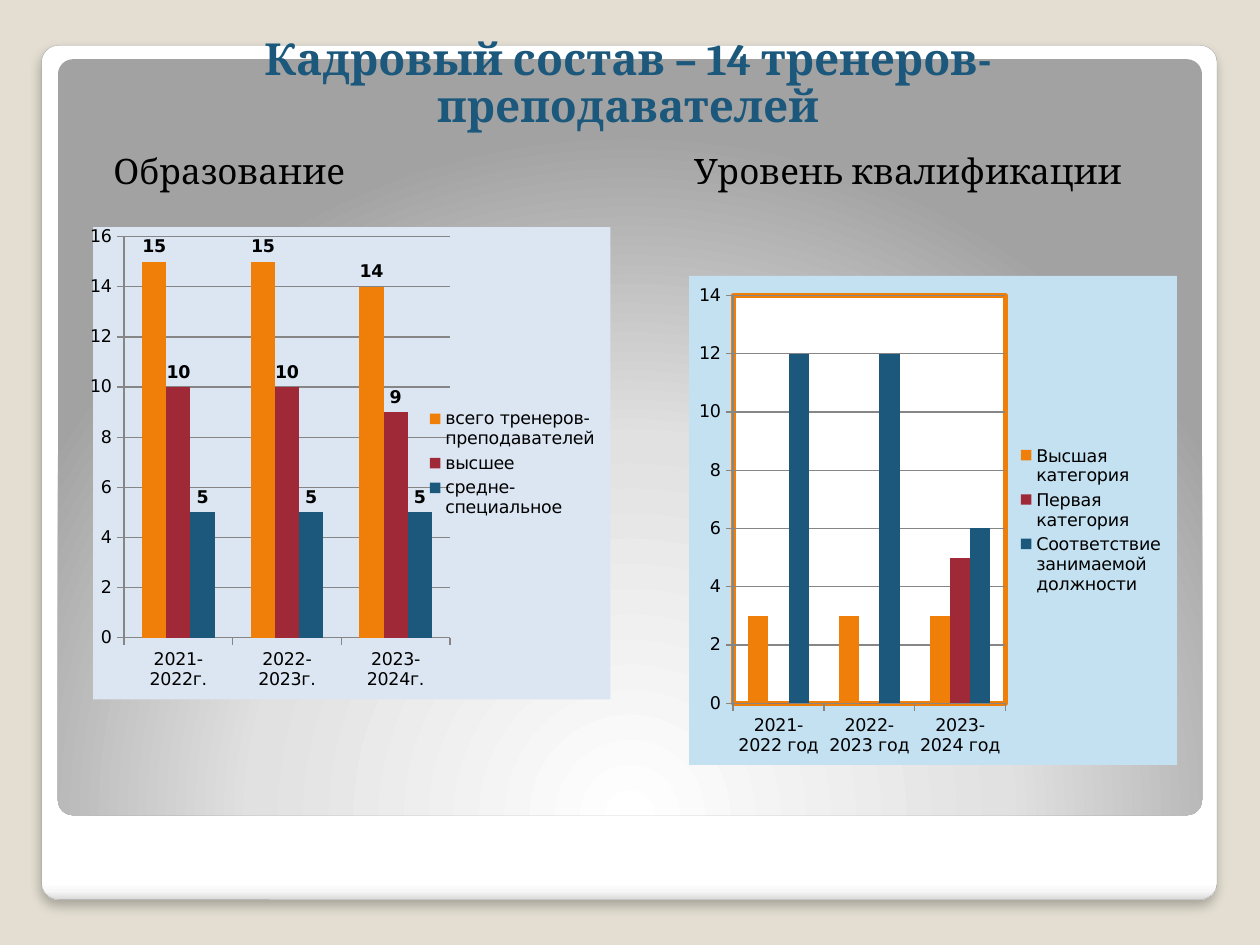
from dataclasses import dataclass
from typing import Optional

from lxml.etree import SubElement
from pptx import Presentation
from pptx.chart.data import CategoryChartData
from pptx.dml.color import RGBColor
from pptx.enum.chart import XL_CHART_TYPE as ChartType
from pptx.enum.chart import XL_LABEL_POSITION as LabelPosition
from pptx.enum.chart import XL_LEGEND_POSITION as LegendPosition
from pptx.enum.chart import XL_TICK_MARK as TickMark
from pptx.enum.shapes import MSO_SHAPE as ShapeType
from pptx.enum.text import MSO_ANCHOR as Anchor
from pptx.enum.text import MSO_AUTO_SIZE as AutoSize
from pptx.enum.text import PP_ALIGN as Align
from pptx.oxml import parse_xml
from pptx.oxml.ns import nsdecls, qn
from pptx.util import Inches, Pt


@dataclass(frozen=True)
class Theme:
    background: str = "E3DED1"
    frame_line: str = "A4A4A4"
    title: str = "1B587C"
    text: str = "000000"
    axis: str = "868686"
    series: tuple = ("F07F09", "9F2936", "1B587C")
    text_font: str = "Cambria"
    chart_font: str = "DejaVu Sans"
    title_size: float = 25.2
    heading_size: float = 20
    chart_size: float = 10


@dataclass(frozen=True)
class Area:
    column: float
    row: float
    columns: float
    rows: float

    def box(self) -> tuple:
        return tuple(
            Inches(cells * CELL)
            for cells in (self.column, self.row, self.columns, self.rows)
        )


@dataclass(frozen=True)
class Panel:
    area: Area
    stops: tuple
    direction: str
    line: Optional[str] = None
    shadow: bool = False


@dataclass(frozen=True)
class Staff:
    heading: str
    heading_area: Area
    area: Area
    fill: str
    categories: tuple
    series: dict
    maximum: int
    labels: bool = False
    plot_layout: tuple = ()
    plot_fill: Optional[str] = None


THEME = Theme()
CELL = 0.1
COLUMNS, ROWS = 100, 75

PANELS = (
    Panel(
        Area(3.3, 3.6, 93.3, 67.8),
        ((0, "FFFFFF"), (98, "FFFFFF"), (99, "F7F7F7"), (100, "DADADA")),
        '<a:lin ang="5400000" scaled="0"/>',
        THEME.frame_line,
        True,
    ),
    Panel(
        Area(4.6, 4.7, 90.8, 60),
        ((0, "FFFFFF"), (55, "E1E1E1"), (100, "A2A2A2")),
        '<a:path path="circle">'
        '<a:fillToRect l="50000" t="175000" r="50000" b="-75000"/></a:path>',
    ),
)

STAFF = (
    Staff(
        "Образование",
        Area(7, 10.9, 41.6, 42.9),
        Area(7.15, 18, 41.3, 37.5),
        "DCE6F2",
        ("2021-2022г.", "2022-2023г.", "2023-2024г."),
        {
            "всего тренеров-преподавателей": (15, 15, 14),
            "высшее": (10, 10, 9),
            "средне-специальное": (5, 5, 5),
        },
        16,
        labels=True,
        plot_layout=(0.06, 0.02, 0.63, 0.85),
    ),
    Staff(
        "Уровень квалификации",
        Area(53.1, 10.9, 41.9, 42.9),
        Area(54.7, 21.9, 38.7, 38.8),
        "C4E1F2",
        ("2021-2022 год", "2022-2023 год", "2023-2024 год"),
        {
            "Высшая категория": (3, 3, 3),
            "Первая категория": (0, 0, 5),
            "Соответствие занимаемой должности": (12, 12, 6),
        },
        14,
        plot_fill="FFFFFF",
    ),
)


def color(value: str) -> RGBColor:
    return RGBColor.from_string(value)


def place(shape, area: Area) -> None:
    shape.left, shape.top, shape.width, shape.height = area.box()


def style_font(font, name: str, size: float, value: str, bold: bool = False) -> None:
    font.name, font.size, font.bold = name, Pt(size), bold
    font.color.rgb = color(value)


def draw_panel(slide, panel: Panel) -> None:
    shape = slide.shapes.add_shape(ShapeType.ROUNDED_RECTANGLE, *panel.area.box())
    shape.adjustments[0] = 0.02
    shape.shadow.inherit = False
    if panel.line:
        shape.line.color.rgb = color(panel.line)
        shape.line.width = Pt(0.16)
    else:
        shape.line.fill.background()
    stops = "".join(
        f'<a:gs pos="{position * 1000}"><a:srgbClr val="{value}"/></a:gs>'
        for position, value in panel.stops
    )
    properties = shape.element.spPr
    properties.find(qn("a:prstGeom")).addnext(parse_xml(
        f'<a:gradFill {nsdecls("a")} rotWithShape="1"><a:gsLst>{stops}</a:gsLst>'
        f"{panel.direction}</a:gradFill>"
    ))
    if panel.shadow:
        properties.find(qn("a:effectLst")).append(parse_xml(
            f'<a:outerShdw {nsdecls("a")} blurRad="{Pt(6)}" dist="{Pt(4)}" '
            'dir="5400000" algn="t" rotWithShape="0"><a:srgbClr val="000000">'
            '<a:alpha val="25000"/></a:srgbClr></a:outerShdw>'
        ))


def write_title(shape, text: str) -> None:
    place(shape, Area(4.7, 4.7, 90.3, 6.3))
    frame = shape.text_frame
    frame.text = text
    frame.word_wrap, frame.auto_size = True, AutoSize.NONE
    frame.vertical_anchor = Anchor.BOTTOM
    frame.margin_left = frame.margin_right = Inches(0.5)
    paragraph = frame.paragraphs[0]
    paragraph.alignment = Align.CENTER
    paragraph.line_spacing = 0.9
    style_font(paragraph.font, THEME.text_font, THEME.title_size, THEME.title, True)


def write_heading(shape, staff: Staff) -> None:
    place(shape, staff.heading_area)
    frame = shape.text_frame
    frame.text = staff.heading
    frame.auto_size = AutoSize.NONE
    frame.margin_left, frame.margin_top = Inches(0.2), Inches(0.1)
    paragraph = frame.paragraphs[0]
    paragraph.space_before = Pt(0)
    properties = paragraph._p.get_or_add_pPr()
    properties.set("marL", str(Inches(0.29)))
    properties.set("indent", str(-Inches(0.29)))
    SubElement(properties, qn("a:buNone"))
    style_font(paragraph.font, THEME.text_font, THEME.heading_size, THEME.text)


def area_fill(fill: str, line: str):
    return parse_xml(
        f'<c:spPr {nsdecls("c", "a")}><a:solidFill><a:srgbClr val="{fill}"/>'
        f"</a:solidFill>{line}</c:spPr>"
    )


def format_plot_area(plot_area, staff: Staff) -> None:
    if staff.plot_layout:
        for layout in plot_area.findall(qn("c:layout")):
            plot_area.remove(layout)
        sides = "".join(
            f'<c:{name} val="{share}"/>'
            for name, share in zip("xywh", staff.plot_layout)
        )
        plot_area.insert(0, parse_xml(
            f'<c:layout {nsdecls("c")}><c:manualLayout><c:layoutTarget val="inner"/>'
            f'<c:xMode val="edge"/><c:yMode val="edge"/>{sides}'
            "</c:manualLayout></c:layout>"
        ))
    if staff.plot_fill:
        plot_area.append(area_fill(
            staff.plot_fill,
            f'<a:ln w="{Pt(3)}"><a:solidFill><a:srgbClr val="{THEME.series[0]}"/>'
            "</a:solidFill><a:round/></a:ln>",
        ))


def draw_chart(slide, staff: Staff) -> None:
    data = CategoryChartData()
    data.categories = staff.categories
    for name, values in staff.series.items():
        data.add_series(name, values)
    chart = slide.shapes.add_chart(
        ChartType.COLUMN_CLUSTERED, *staff.area.box(), data
    ).chart
    chart.has_title = False
    style_font(chart.font, THEME.chart_font, THEME.chart_size, THEME.text)
    chart.has_legend = True
    chart.legend.position = LegendPosition.RIGHT
    chart.legend.include_in_layout = False
    for axis in (chart.category_axis, chart.value_axis):
        axis.major_tick_mark = TickMark.OUTSIDE
        axis.format.line.color.rgb = color(THEME.axis)
    scale = chart.value_axis
    scale.minimum_scale, scale.maximum_scale, scale.major_unit = 0, staff.maximum, 2
    scale.major_gridlines.format.line.color.rgb = color(THEME.axis)
    plot = chart.plots[0]
    plot.gap_width, plot.overlap, plot.vary_by_categories = 150, 0, False
    for series, value in zip(plot.series, THEME.series):
        series.format.fill.solid()
        series.format.fill.fore_color.rgb = color(value)
        if staff.labels:
            labels = series.data_labels
            labels.show_value = True
            labels.position = LabelPosition.OUTSIDE_END
            style_font(
                labels.font, THEME.chart_font, THEME.chart_size, THEME.text, True
            )
    body = chart.element.find(qn("c:chart"))
    body.addnext(area_fill(staff.fill, "<a:ln><a:noFill/></a:ln>"))
    format_plot_area(body.find(qn("c:plotArea")), staff)


def main() -> None:
    presentation = Presentation()
    presentation.slide_width = Inches(COLUMNS * CELL)
    presentation.slide_height = Inches(ROWS * CELL)
    slide = presentation.slides.add_slide(presentation.slide_layouts[3])
    slide.background.fill.solid()
    slide.background.fill.fore_color.rgb = color(THEME.background)
    title, *headings = slide.placeholders
    for panel in PANELS:
        draw_panel(slide, panel)
    for placeholder in (title, *headings):
        placeholder.element.getparent().append(placeholder.element)
    write_title(title, "Кадровый состав – 14 тренеров-преподавателей")
    for heading, staff in zip(headings, STAFF):
        write_heading(heading, staff)
    for staff in STAFF:
        draw_chart(slide, staff)
    presentation.save("out.pptx")


if __name__ == "__main__":
    main()
